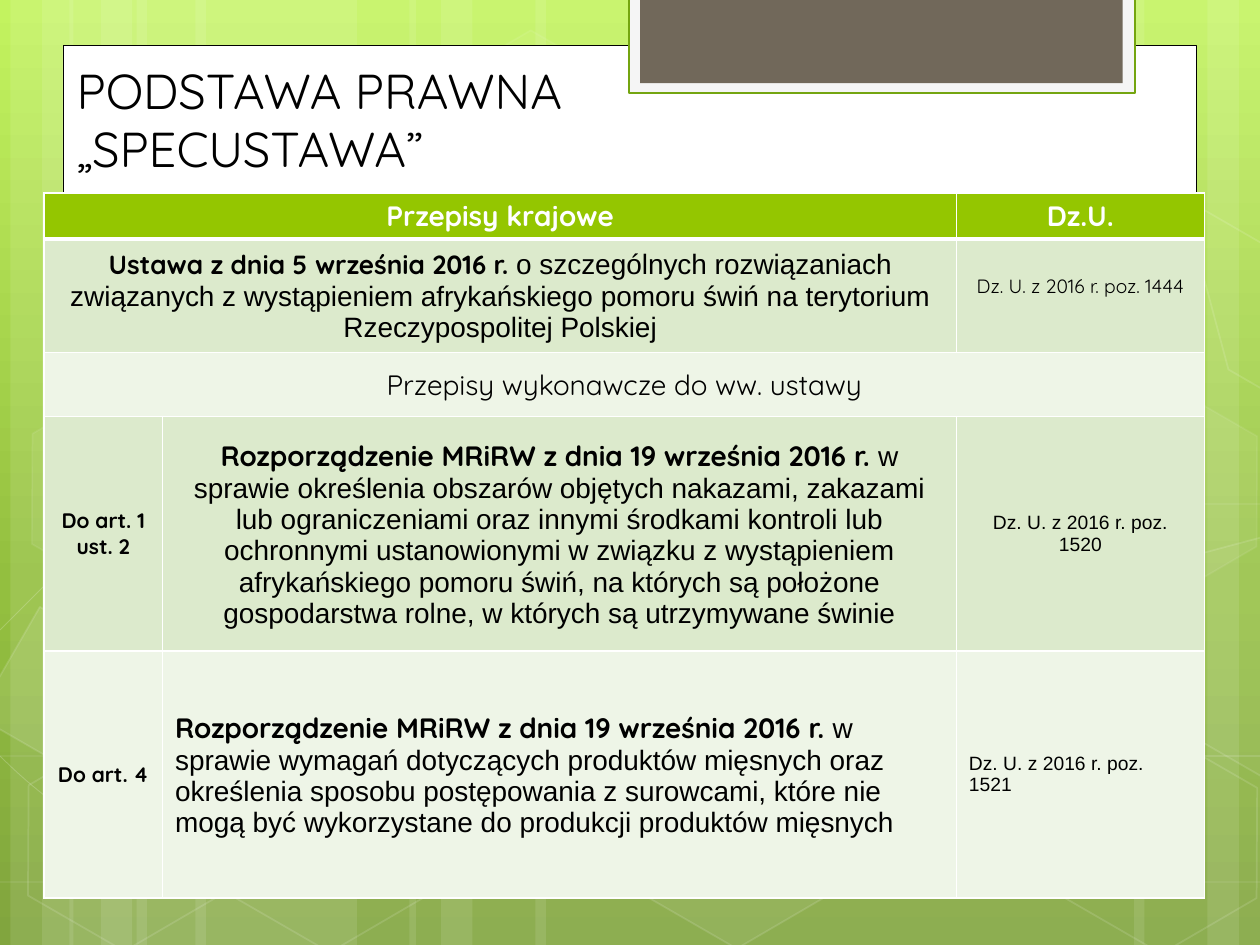
import copy
import math

import pptx
import pptx.util
from lxml import etree
from pptx.dml.color import RGBColor
from pptx.enum.shapes import MSO_SHAPE
from pptx.enum.text import MSO_ANCHOR, PP_ALIGN
from pptx.oxml.ns import qn

WHITE = RGBColor(0xFF, 0xFF, 0xFF)
BLACK = RGBColor(0, 0, 0)
LIME = RGBColor(0xC3, 0xF3, 0x5F)
LEAF = RGBColor(0x93, 0xBF, 0x3F)
MOSS = RGBColor(0x81, 0xA5, 0x3E)
TAB_FILL = RGBColor(0xF5, 0xF5, 0xF5)
TAB_LINE = RGBColor(0x74, 0xA5, 0x10)
TAUPE = RGBColor(0x71, 0x68, 0x5A)
HEADER = RGBColor(0x94, 0xC6, 0x00)
ROW_DARK = RGBColor(0xDC, 0xEA, 0xCC)
ROW_LIGHT = RGBColor(0xEE, 0xF5, 0xE7)
HEADING_FONT, BODY_FONT = "Quicksand", "Arial"

# The slide is a grid of 10 columns by 7.5 rows of square cells
COLUMNS, ROWS = 10, 7.5
CELL = pptx.util.Inches(1)
SLIDE_BOX = (0, 0, COLUMNS, ROWS)
TILT = 30


def cells(*lengths):
    return [round(length * CELL) for length in lengths]


def style(shape, fill=None, line=None, width=1, fill_alpha=100, line_alpha=100):
    shape.shadow.inherit = False
    for target, color, alpha in ((shape.fill, fill, fill_alpha),
                                 (shape.line.fill, line, line_alpha)):
        if color is None:
            target.background()
            continue
        target.solid()
        target.fore_color.rgb = color
        if alpha < 100:
            element = target._xPr.find(".//" + qn("a:srgbClr"))
            etree.SubElement(element, qn("a:alpha")).set("val", str(alpha * 1000))
    if line is not None:
        shape.line.width = pptx.util.Pt(width)


def add_box(slide, box, kind=MSO_SHAPE.RECTANGLE, **look):
    shape = slide.shapes.add_shape(kind, *cells(*box))
    style(shape, **look)
    return shape


def add_outline(slide, points, closed, **look):
    builder = slide.shapes.build_freeform(*points[0], scale=CELL)
    builder.add_line_segments(points[1:], close=closed)
    shape = builder.convert_to_shape()
    style(shape, **look)
    return shape


def add_curve(slide, points, **look):
    """Draw a chain of cubic Bezier segments: three points to a segment."""
    shape = add_outline(slide, points, False, **look)
    segments = list(shape._element.iter(qn("a:lnTo")))
    for i in range(0, len(segments), 3):
        bezier = etree.Element(qn("a:cubicBezTo"))
        segments[i].addprevious(bezier)
        for segment in segments[i:i + 3]:
            bezier.append(segment[0])
            segment.getparent().remove(segment)


def add_run(paragraph, text, font, size, color, bold=False):
    run = paragraph.add_run()
    run.text = text
    run.font.name, run.font.size = font, pptx.util.Pt(size)
    run.font.color.rgb, run.font.bold = color, bold


def paint_background(slide):
    fill = slide.background.fill
    fill.gradient()
    fill.gradient_angle = 270
    first = fill.gradient_stops[0]._gs
    first.addnext(copy.deepcopy(first))
    for stop, position, color in zip(fill.gradient_stops, (0, 0.62, 1), (LIME, LEAF, MOSS)):
        stop.position = position
        stop.color.rgb = color


def add_bands(slide, box):
    """Sets of three overlapping stripes, measured in twelfths of a cell."""
    left, top, _, height = box
    for start, direction, wide in ((1, 1, 21), (6.6, 1, 21), (121, -1, 21), (39, 1, 37)):
        for offset, width in ((12, wide), (0, 6), (3, 10)):
            edge = start + direction * offset - (width if direction < 0 else 0)
            add_box(slide, (left + edge / 12, top, width / 12, height),
                    fill=WHITE, fill_alpha=10)


CURVES = [
    [(0.07, 6.73), (0.61, 6.76), (1.15, 6.79), (1.9, 6.78), (2.65, 6.77), (3.58, 6.75),
     (4.58, 6.65), (5.58, 6.55), (7, 6.36), (7.92, 6.17), (8.83, 5.98), (9.77, 5.68),
     (10.07, 5.51)],
    [(0.07, 4.77), (0.36, 4.61), (0.65, 4.46), (1.21, 4.31), (1.78, 4.16), (2.59, 3.94),
     (3.47, 3.87), (4.36, 3.8), (5.44, 3.79), (6.54, 3.87), (7.64, 3.95), (9.47, 4.26),
     (10.07, 4.34)],
    [(0.06, 6.17), (1.27, 6.72), (2.47, 7.27), (3.34, 7.49)],
    [(0.07, 5.78), (0.38, 5.89), (0.7, 6), (1.28, 6.16), (1.86, 6.31), (2.73, 6.56),
     (3.57, 6.73), (4.4, 6.9), (5.45, 7.08), (6.28, 7.18), (7.11, 7.29), (8, 7.33),
     (8.53, 7.36), (9.05, 7.4), (9.19, 7.38), (9.45, 7.38), (9.71, 7.37), (9.89, 7.35),
     (10.07, 7.34)],
    [(2.42, 7.49), (2.6, 7.29), (2.78, 7.09), (3.02, 6.91), (3.26, 6.73), (3.6, 6.53),
     (3.88, 6.39), (4.16, 6.25), (4.33, 6.19), (4.7, 6.09), (5.06, 5.99), (5.73, 5.85),
     (6.08, 5.78), (6.44, 5.71), (6.49, 5.71), (6.8, 5.69), (7.11, 5.66), (7.6, 5.63),
     (7.94, 5.62), (8.29, 5.61), (8.86, 5.62), (8.86, 5.62), (9.08, 5.62), (9.31, 5.62),
     (9.53, 5.62), (9.71, 5.63), (9.88, 5.64), (9.97, 5.65), (10.06, 5.66), (10.03, 5.65),
     (10.06, 5.66)],
]
# left, top, fill opacity (0 is no fill), line opacity
HEXAGONS = [(3.34, 0.36, 4, 8), (4.97, 5.89, 6, 12), (0.11, 5.91, 0, 12), (0.14, 3.12, 7, 8),
            (1.74, 5.92, 0, 12), (7.53, 4.53, 10, 12), (8.34, 5.93, 0, 12), (8.34, 3.14, 7, 8)]
# hexagons cut by the slide's edge: centre, corners from the centre, fill opacity
LEFT_CUT = [(-0.28, -0.9), (-0.17, -0.97), (0.6, -0.53), (0.59, 0.35), (-0.16, 0.79),
            (-0.28, 0.72)]
RIGHT_CUT = [(-0.59, -0.34), (0.16, -0.78), (0.25, -0.73), (0.24, 0.94), (0.17, 0.98),
             (-0.59, 0.54)]
CUT_HEXAGONS = [(0.36, 5.35, LEFT_CUT, 10), (9.85, 5.2, RIGHT_CUT, 4),
                (9.85, 2.41, RIGHT_CUT, 0)]


def add_pattern(slide, box):
    left, top = box[:2]
    for curve in CURVES:
        add_curve(slide, [(left + x, top + y) for x, y in curve],
                  line=WHITE, width=0.5, line_alpha=20)
    for x, y, fill_alpha, line_alpha in HEXAGONS:
        hexagon = add_box(slide, (left + x, top + y, 1.75, 1.52), MSO_SHAPE.HEXAGON,
                          fill=WHITE if fill_alpha else None, fill_alpha=fill_alpha,
                          line=WHITE, line_alpha=line_alpha)
        hexagon.rotation = TILT
        hexagon.adjustments[0], hexagon.adjustments[1] = 0.285, 1.155
    cosine, sine = math.cos(math.radians(TILT)), math.sin(math.radians(TILT))
    for x, y, corners, fill_alpha in CUT_HEXAGONS:
        upright = [(left + x + dx * cosine + dy * sine, top + y + dy * cosine - dx * sine)
                   for dx, dy in corners]
        add_outline(slide, upright, True, fill=WHITE if fill_alpha else None,
                    fill_alpha=fill_alpha, line=WHITE, line_alpha=12).rotation = TILT


def add_panel(slide, box):
    """White sheet with a framed tab hanging over its top edge."""
    left, top = box[:2]
    add_box(slide, box, fill=WHITE, line=BLACK, width=0.5)
    tab_left, tab_top = left + 4.49, top - 0.38
    add_box(slide, (tab_left, tab_top, 4.02, 0.76), fill=TAB_FILL, line=TAB_LINE, width=1.25)
    add_box(slide, (tab_left + 0.09, tab_top, 3.83, 0.68), fill=TAUPE)


def add_title(slide, box, lines):
    frame = slide.shapes.add_textbox(*cells(*box)).text_frame
    frame.word_wrap = True
    frame.vertical_anchor = MSO_ANCHOR.BOTTOM
    paragraph = frame.paragraphs[0]
    for number, line in enumerate(lines):
        if number:
            paragraph.add_line_break()
        add_run(paragraph, line, HEADING_FONT, 28, BLACK)


# Table entries: row, column, columns spanned, alignment, runs (text, font, size, bold)
CENTER, LEFT = PP_ALIGN.CENTER, PP_ALIGN.LEFT
REGULATION = ("Rozporządzenie MRiRW z dnia 19 września 2016 r. ", HEADING_FONT, 16, True)
ENTRIES = [
    (0, 0, 2, CENTER, [("Przepisy krajowe", HEADING_FONT, 16, True)]),
    (0, 2, 1, CENTER, [("Dz.U.", HEADING_FONT, 16, True)]),
    (1, 0, 2, CENTER, [
        ("Ustawa z dnia 5 września 2016 r. ", HEADING_FONT, 15, True),
        ("o szczególnych rozwiązaniach związanych z wystąpieniem afrykańskiego pomoru świń "
         "na terytorium Rzeczypospolitej Polskiej", BODY_FONT, 16, False)]),
    (1, 2, 1, CENTER, [("Dz. U. z 2016 r. poz. 1444", HEADING_FONT, 11, False)]),
    (2, 0, 3, CENTER, [("Przepisy wykonawcze do ww. ustawy", HEADING_FONT, 16, False)]),
    (3, 0, 1, CENTER, [("Do art. 1 ust. 2", HEADING_FONT, 12, True)]),
    (3, 1, 1, CENTER, [
        REGULATION,
        ("w sprawie określenia obszarów objętych nakazami, zakazami lub ograniczeniami oraz "
         "innymi środkami kontroli lub ochronnymi ustanowionymi w związku z wystąpieniem "
         "afrykańskiego pomoru świń, na których są położone gospodarstwa rolne, w których są "
         "utrzymywane świnie", BODY_FONT, 16, False)]),
    (3, 2, 1, CENTER, [("Dz. U. z 2016 r. poz. 1520", BODY_FONT, 11, False)]),
    (4, 0, 1, CENTER, [("Do art. 4", HEADING_FONT, 12, True)]),
    (4, 1, 1, LEFT, [
        REGULATION,
        ("w sprawie wymagań dotyczących produktów mięsnych oraz określenia sposobu "
         "postępowania z surowcami, które nie mogą być wykorzystane do produkcji produktów "
         "mięsnych", BODY_FONT, 16, False)]),
    (4, 2, 1, LEFT, [("Dz. U. z 2016 r. poz. 1521", BODY_FONT, 11, False)]),
]


def set_borders(cell, bottom):
    properties = cell._tc.get_or_add_tcPr()
    for index, (side, width) in enumerate(zip("LRTB", (1, 1, 1, bottom))):
        line = etree.Element(qn("a:ln" + side), w=str(pptx.util.Pt(width)))
        solid = etree.SubElement(line, qn("a:solidFill"))
        etree.SubElement(solid, qn("a:srgbClr")).set("val", str(WHITE))
        properties.insert(index, line)


def add_acts_table(slide, box, widths, heights):
    table = slide.shapes.add_table(len(heights), len(widths), *cells(*box)).table
    for column, width in zip(table.columns, cells(*widths)):
        column.width = width
    fills = (HEADER, ROW_DARK, ROW_LIGHT, ROW_DARK, ROW_LIGHT)
    for number, (row, height, fill) in enumerate(zip(table.rows, cells(*heights), fills)):
        row.height = height
        for cell in row.cells:
            cell.fill.solid()
            cell.fill.fore_color.rgb = fill
            set_borders(cell, 1 if number else 3)
    for row, column, span, alignment, runs in ENTRIES:
        cell = table.cell(row, column)
        if span > 1:
            cell.merge(table.cell(row, column + span - 1))
        cell.vertical_anchor = MSO_ANCHOR.MIDDLE
        paragraph = cell.text_frame.paragraphs[0]
        paragraph.alignment = alignment
        for text, font, size, bold in runs:
            add_run(paragraph, text, font, size, BLACK if row else WHITE, bold)
    # The first act's reference sits a little above the middle
    table.cell(1, 2).margin_bottom = cells(0.2)[0]


def main():
    presentation = pptx.Presentation()
    presentation.slide_width, presentation.slide_height = cells(COLUMNS, ROWS)
    slide = presentation.slides.add_slide(presentation.slide_layouts[6])
    paint_background(slide)
    add_bands(slide, SLIDE_BOX)
    add_pattern(slide, SLIDE_BOX)
    add_panel(slide, (0.5, 0.36, 9, 6.76))
    add_title(slide, (0.51, 0.36, 4.49, 1.1), ("PODSTAWA PRAWNA", "„SPECUSTAWA”"))
    add_acts_table(slide, (0.35, 1.53, 9.21, 5.53), (0.94, 6.3, 1.97),
                   (0.35, 0.85, 0.51, 1.86, 1.96))
    presentation.save("out.pptx")


if __name__ == "__main__":
    main()
